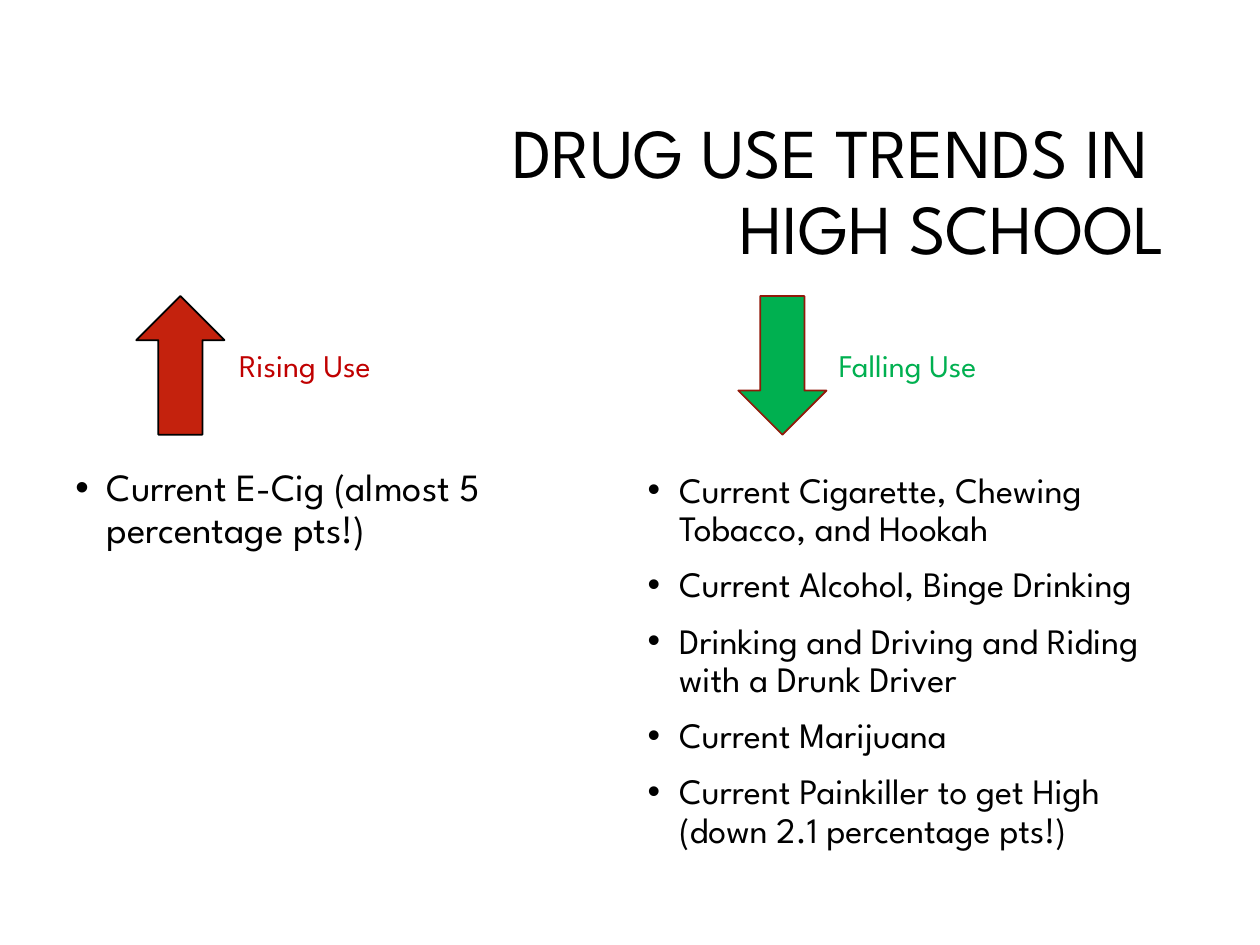
from lxml.etree import SubElement
from pptx import Presentation
from pptx.dml.color import RGBColor
from pptx.enum.shapes import MSO_SHAPE as Shape
from pptx.enum.text import MSO_ANCHOR as Anchor, PP_ALIGN as Align
from pptx.oxml.ns import qn
from pptx.util import Pt

BLACK = RGBColor(0x00, 0x00, 0x00)
ARROW_RED = RGBColor(0xC4, 0x22, 0x0D)
DARK_RED = RGBColor(0x91, 0x19, 0x0A)
LABEL_RED = RGBColor(0xC0, 0x00, 0x00)
GREEN = RGBColor(0x00, 0xB0, 0x50)

FONT = "League Spartan"
INDENT = 18
ARROW_TOP, ARROW_WIDTH, ARROW_HEIGHT = 169.2, 50.4, 79.2
LABEL_TOP, LABEL_WIDTH, LABEL_HEIGHT = 194.4, 108, 28.8
LIST_WIDTH, LIST_HEIGHT = 308, 246.2

TITLE = "DRUG USE TRENDS IN \vHIGH SCHOOL"
TRENDS = [
    {
        "label": "Rising Use", "label_color": LABEL_RED, "label_left": 129.6,
        "arrow": Shape.UP_ARROW, "arrow_left": 77.9,
        "fill": ARROW_RED, "line": BLACK,
        "list_at": (36, 264.3), "size": 22,
        "items": ["Current E-Cig (almost 5 percentage pts!)"],
    },
    {
        "label": "Falling Use", "label_color": GREEN, "label_left": 472.3,
        "arrow": Shape.DOWN_ARROW, "arrow_left": 421.9,
        "fill": GREEN, "line": DARK_RED,
        "list_at": (363, 266.4), "size": 20.4,
        "items": [
            "Current Cigarette, Chewing Tobacco, and Hookah",
            "Current Alcohol, Binge Drinking",
            "Drinking and Driving and Riding with a Drunk Driver",
            "Current Marijuana",
            "Current Painkiller to get High (down 2.1 percentage pts!)",
        ],
    },
]


def add_text(slide, box, lines, size, color=BLACK, anchor=Anchor.TOP,
             bulleted=False, **paragraph_format):
    """Add a wrapped text box with one paragraph per line."""
    frame = slide.shapes.add_textbox(*map(Pt, box)).text_frame
    frame.word_wrap = True
    frame.vertical_anchor = anchor
    for i, line in enumerate(lines):
        paragraph = frame.add_paragraph() if i else frame.paragraphs[0]
        paragraph.text = line
        for name, value in paragraph_format.items():
            setattr(paragraph, name, value)
        if bulleted:
            if i:
                paragraph.space_before = Pt(10)
            add_bullet(paragraph)
        for run in paragraph.runs:
            run.font.name = FONT
            run.font.size = Pt(size)
            run.font.color.rgb = color


def add_bullet(paragraph):
    properties = paragraph._p.get_or_add_pPr()
    properties.set("marL", str(Pt(INDENT)))
    properties.set("indent", str(-Pt(INDENT)))
    SubElement(properties, qn("a:buFont"), typeface="Arial")
    SubElement(properties, qn("a:buChar"), char="•")


def add_arrow(slide, trend):
    arrow = slide.shapes.add_shape(
        trend["arrow"], Pt(trend["arrow_left"]), Pt(ARROW_TOP),
        Pt(ARROW_WIDTH), Pt(ARROW_HEIGHT))
    arrow.shadow.inherit = False
    arrow.fill.solid()
    arrow.fill.fore_color.rgb = trend["fill"]
    arrow.line.color.rgb = trend["line"]
    arrow.line.width = Pt(1)


def main():
    deck = Presentation()
    deck.slide_width, deck.slide_height = Pt(720), Pt(540)
    slide = deck.slides.add_slide(deck.slide_layouts[6])
    add_text(slide, (171.4, 59.8, 501.8, 102.2), [TITLE], 40,
             anchor=Anchor.MIDDLE, alignment=Align.RIGHT, line_spacing=0.9)
    for trend in TRENDS:
        add_text(slide, (*trend["list_at"], LIST_WIDTH, LIST_HEIGHT),
                 trend["items"], trend["size"], bulleted=True, line_spacing=0.9)
        add_arrow(slide, trend)
        add_text(slide, (trend["label_left"], LABEL_TOP, LABEL_WIDTH, LABEL_HEIGHT),
                 [trend["label"]], 18, trend["label_color"])
    deck.save("out.pptx")


if __name__ == "__main__":
    main()
